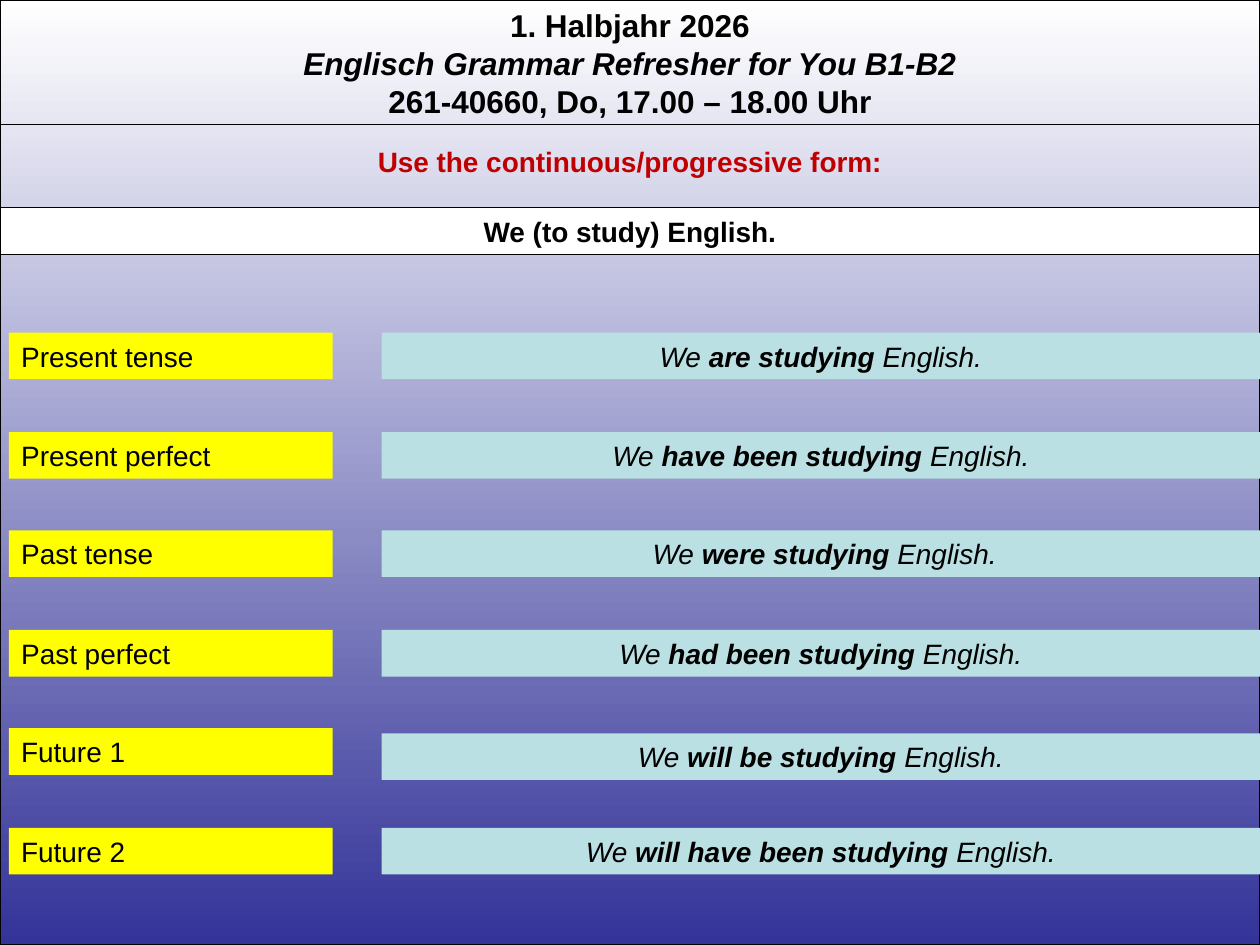
from dataclasses import dataclass
from typing import Optional

from lxml.etree import SubElement
from pptx import Presentation
from pptx.dml.color import RGBColor
from pptx.enum.shapes import MSO_CONNECTOR, MSO_SHAPE
from pptx.enum.text import MSO_AUTO_SIZE, PP_ALIGN
from pptx.oxml.ns import qn
from pptx.util import Inches, Pt

COLOURS = {
    "black": "000000",
    "white": "FFFFFF",
    "indigo": "333399",
    "red": "C00000",
    "yellow": "FFFF00",
    "aqua": "BBE0E3",
}
SLIDE_WIDTH, SLIDE_HEIGHT = 10, 7.5
BAR_HEIGHT = 0.37
FIRST_ROW_TOP, ROW_STEP = 2.64, 0.786
RULE_TOP = 0.99


@dataclass(frozen=True)
class Run:
    text: str
    bold: bool = False
    italic: bool = False


@dataclass(frozen=True)
class Tense:
    name: str
    verb: str
    subject: str = "We "
    answer_shift: float = 0


TENSES = [
    Tense("Present tense", "are studying "),
    Tense("Present perfect", "have been studying "),
    Tense("Past tense", "were studying ", subject=" We "),
    Tense("Past perfect", "had been studying "),
    Tense("Future 1", "will be studying ", answer_shift=0.04),
    Tense("Future 2", "will have been studying "),
]


def colour(name: str) -> RGBColor:
    """Return the named colour."""
    return RGBColor.from_string(COLOURS[name])


def write_text(shape, lines: list[list[Run]], *, size: float = 16,
               text_colour: str = "black", alignment=PP_ALIGN.CENTER) -> None:
    """Fill a shape with one paragraph for each list of runs."""
    frame = shape.text_frame
    frame.word_wrap = True
    frame.auto_size = MSO_AUTO_SIZE.SHAPE_TO_FIT_TEXT
    for index, line in enumerate(lines):
        paragraph = frame.add_paragraph() if index else frame.paragraphs[0]
        paragraph.alignment = alignment
        for part in line:
            run = paragraph.add_run()
            run.text = part.text
            run.font.name = "Arial"
            run.font.size = Pt(size)
            run.font.bold = part.bold
            run.font.italic = part.italic
            run.font.color.rgb = colour(text_colour)


def add_rectangle(slide, left: float, top: float, width: float, height: float,
                  fill: Optional[str] = None, line: Optional[str] = None):
    """Add a flat rectangle with an optional solid fill and outline."""
    shape = slide.shapes.add_shape(
        MSO_SHAPE.RECTANGLE, Inches(left), Inches(top), Inches(width), Inches(height))
    shape.shadow.inherit = False
    if fill:
        shape.fill.solid()
        shape.fill.fore_color.rgb = colour(fill)
    if line:
        shape.line.color.rgb = colour(line)
        shape.line.width = Pt(0.75)
    else:
        shape.line.fill.background()
    return shape


def add_backdrop(slide) -> None:
    """Cover the slide with a white to indigo gradient."""
    backdrop = add_rectangle(slide, 0, 0, SLIDE_WIDTH, SLIDE_HEIGHT, line="black")
    backdrop.fill.gradient()
    backdrop.fill.gradient_angle = 270
    for stop, name, position in zip(backdrop.fill.gradient_stops, ("white", "indigo"), (0, 1)):
        stop.color.rgb = colour(name)
        stop.position = position


def add_text_box(slide, top: float, height: float, lines: list[list[Run]], **text_format) -> None:
    """Add a text box as wide as the slide."""
    box = slide.shapes.add_textbox(0, Inches(top), Inches(SLIDE_WIDTH), Inches(height))
    write_text(box, lines, **text_format)


def add_rule(slide) -> None:
    """Draw the line below the course heading."""
    rule = slide.shapes.add_connector(
        MSO_CONNECTOR.STRAIGHT, 0, Inches(RULE_TOP), Inches(SLIDE_WIDTH), Inches(RULE_TOP))
    rule.line.color.rgb = colour("black")
    rule.line.width = Pt(0.75)
    SubElement(rule._element.spPr, qn("a:effectLst"))


def add_tense(slide, tense: Tense, top: float) -> None:
    """Add a tense label and its example sentence."""
    label = add_rectangle(slide, 0.07, top, 2.57, BAR_HEIGHT, "yellow")
    write_text(label, [[Run(tense.name)]], alignment=PP_ALIGN.LEFT)
    answer = add_rectangle(slide, 3.03, top + tense.answer_shift, 6.97, BAR_HEIGHT, "aqua")
    write_text(answer, [[
        Run(tense.subject, italic=True),
        Run(tense.verb, bold=True, italic=True),
        Run("English.", italic=True),
    ]])


def main() -> None:
    """Build and save the presentation."""
    presentation = Presentation()
    presentation.slide_width = Inches(SLIDE_WIDTH)
    presentation.slide_height = Inches(SLIDE_HEIGHT)
    slide = presentation.slides.add_slide(presentation.slide_layouts[6])

    add_backdrop(slide)
    add_text_box(slide, 0, 1.01, [
        [Run("1. Halbjahr 2026", bold=True)],
        [Run("Englisch Grammar Refresher for You B1-B2", bold=True, italic=True)],
        [Run("261-40660, Do, 17.00 – 18.00 Uhr", bold=True)],
    ], size=18)
    add_rule(slide)
    add_text_box(slide, 1.1, BAR_HEIGHT,
                 [[Run("Use the continuous/progressive form:", bold=True)]], text_colour="red")
    task = add_rectangle(slide, 0, 1.65, SLIDE_WIDTH, BAR_HEIGHT, "white", "black")
    write_text(task, [[Run("We (to study) English.", bold=True)]])
    for row, tense in enumerate(TENSES):
        add_tense(slide, tense, round(FIRST_ROW_TOP + row * ROW_STEP, 2))

    presentation.save("out.pptx")


if __name__ == "__main__":
    main()
